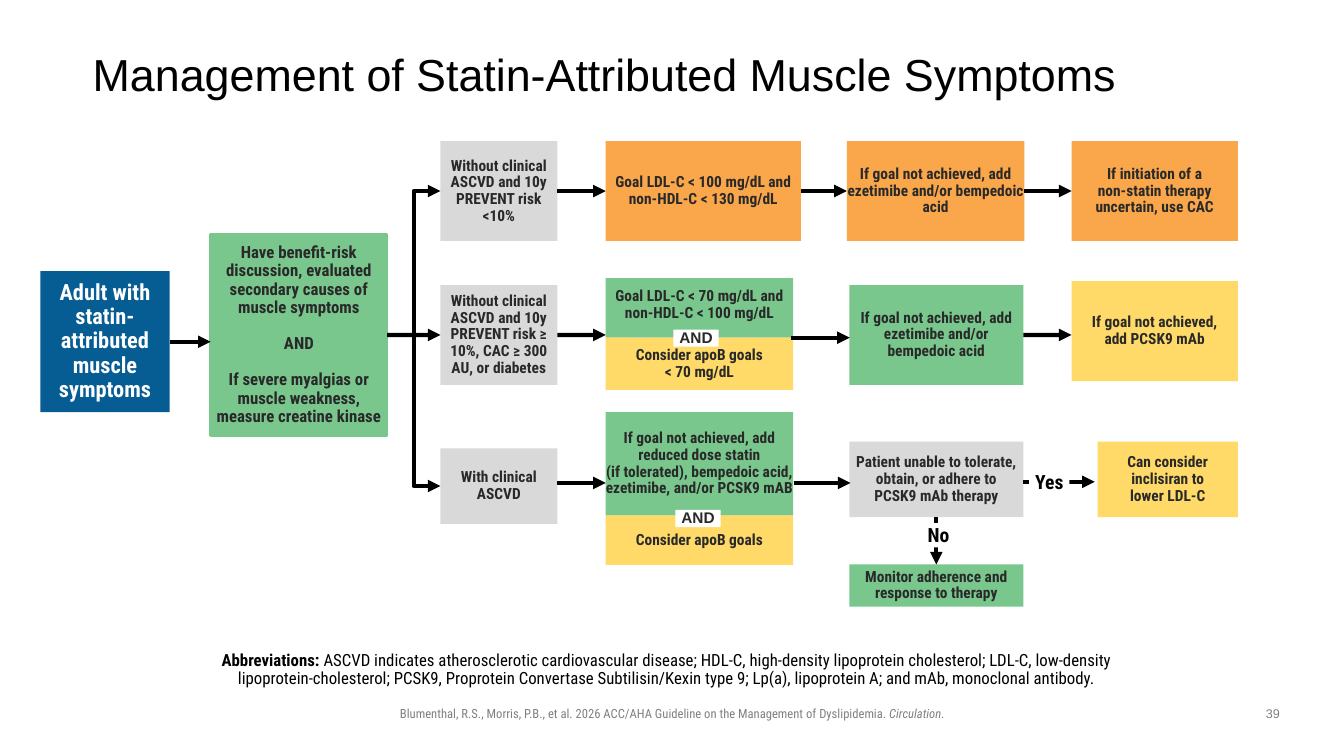
from lxml import etree
from pptx import Presentation
from pptx.dml.color import RGBColor
from pptx.enum.shapes import MSO_CONNECTOR, MSO_SHAPE
from pptx.enum.text import MSO_ANCHOR, MSO_AUTO_SIZE, PP_ALIGN
from pptx.oxml.ns import qn
from pptx.util import Pt

RECTANGLE = MSO_SHAPE.RECTANGLE
STRAIGHT, ELBOW = MSO_CONNECTOR.STRAIGHT, MSO_CONNECTOR.ELBOW
TOP, MIDDLE, BOTTOM = MSO_ANCHOR.TOP, MSO_ANCHOR.MIDDLE, MSO_ANCHOR.BOTTOM
LEFT, CENTER = PP_ALIGN.LEFT, PP_ALIGN.CENTER
NO_AUTOFIT = MSO_AUTO_SIZE.NONE

CONDENSED, SANS = "Roboto Condensed", "Arial"
BLUE, GREEN, ORANGE, YELLOW, GRAY = "065D93", "79C78D", "FAA74B", "FFDA68", "D9D9D9"
BLACK, WHITE, DARK, FOOTER_GRAY = "000000", "FFFFFF", "292929", "808080"
NO_INSETS = (0, 0, 0, 0)
DEFAULT_INSETS = (7.2, 3.6, 7.2, 3.6)

# Sides of a rectangle where connectors join
SIDE_LEFT, SIDE_BOTTOM, SIDE_RIGHT, SIDE_TOP = 1, 2, 3, 0

# Columns and rows of the flow chart
COLUMN_RISK, COLUMN_GOAL, COLUMN_ADD, COLUMN_LAST = 314.6, 432.7, 606.6, 765.4
WIDTH_RISK, WIDTH_GOAL, WIDTH_ADD, WIDTH_LAST = 83.5, 133.9, 124.4, 118.8
ROW_LOW, ROW_HIGH = 100.8, 203.6
ROW_HEIGHT = 71.3


def color(hex_string):
    return RGBColor.from_string(hex_string)


def place(shape, left, top, width, height):
    shape.left, shape.top = Pt(left), Pt(top)
    shape.width, shape.height = Pt(width), Pt(height)


def set_frame(shape, insets, anchor):
    frame = shape.text_frame
    frame.word_wrap = True
    frame.auto_size = NO_AUTOFIT
    frame.vertical_anchor = anchor
    frame.margin_left, frame.margin_top, frame.margin_right, frame.margin_bottom = map(Pt, insets)
    return frame


def add_text(para, text, size, font=CONDENSED, ink=DARK, bold=False, italic=False):
    for index, line in enumerate(text.split("\n")):
        if index:
            para.add_line_break()
        span = para.add_run()
        span.text = line
        span.font.name, span.font.size = font, Pt(size)
        span.font.bold, span.font.italic = bold, italic
        span.font.color.rgb = color(ink)


def add_box(page, text, fill, left, top, width, height, size=11, font=CONDENSED,
            ink=DARK, insets=NO_INSETS, anchor=MIDDLE, spacing=0.9):
    """Draw a filled rectangle; text is one string or a list of paragraphs."""
    box = page.shapes.add_shape(RECTANGLE, Pt(left), Pt(top), Pt(width), Pt(height))
    box.shadow.inherit = False
    box.fill.solid()
    box.fill.fore_color.rgb = color(fill)
    box.line.fill.background()
    frame = set_frame(box, insets, anchor)
    for index, words in enumerate([text] if isinstance(text, str) else text):
        para = frame.add_paragraph() if index else frame.paragraphs[0]
        para.alignment, para.line_spacing = CENTER, spacing
        if index:
            para.space_before = Pt(13)
        add_text(para, words, size, font, ink, bold=True)
    return box


def add_arrow(page, start, end, kind=STRAIGHT, start_side=SIDE_RIGHT, end_side=SIDE_LEFT):
    """Each end is a box to join, or an (x, y) point."""
    joins = []
    points = []
    for target, side in ((start, start_side), (end, end_side)):
        joined = not isinstance(target, tuple)
        joins.append(joined)
        points.extend(side_point(target, side) if joined else map(Pt, target))
    arrow = page.shapes.add_connector(kind, *points)
    if joins[0]:
        arrow.begin_connect(start, start_side)
    if joins[1]:
        arrow.end_connect(end, end_side)
    arrow.line.width = Pt(3)
    arrow.line.color.rgb = color(BLACK)
    etree.SubElement(arrow.line._get_or_add_ln(), qn("a:tailEnd"), type="triangle")
    etree.SubElement(arrow._element.spPr, qn("a:effectLst"))


def side_point(box, side):
    middle_x, middle_y = box.left + box.width // 2, box.top + box.height // 2
    return {SIDE_TOP: (middle_x, box.top),
            SIDE_LEFT: (box.left, middle_y),
            SIDE_BOTTOM: (middle_x, box.top + box.height),
            SIDE_RIGHT: (box.left + box.width, middle_y)}[side]


def fill_title(page):
    title = page.shapes.title
    place(title, 66.2, 28.8, 828, 51.8)
    para = set_frame(title, NO_INSETS, MIDDLE).paragraphs[0]
    para.alignment, para.line_spacing = LEFT, 0.9
    add_text(para, "Management of Statin-Attributed Muscle Symptoms", 32, SANS, BLACK)


def fill_abbreviations(page):
    body = page.placeholders[1]
    place(body, 135.4, 462.2, 689, 33.1)
    para = set_frame(body, (0, 3.6, 7.2, 3.6), BOTTOM).paragraphs[0]
    properties = para._p.get_or_add_pPr()
    properties.set("marL", "0")
    properties.set("indent", "0")
    etree.SubElement(properties, qn("a:buNone"))
    para.alignment, para.line_spacing, para.space_before = CENTER, 0.9, Pt(0)
    add_text(para, "Abbreviations: ", 12, ink=BLACK, bold=True)
    add_text(para, "ASCVD indicates atherosclerotic cardiovascular disease; HDL-C, high-density "
             "lipoprotein cholesterol; LDL-C, low-density lipoprotein-cholesterol; PCSK9, "
             "Proprotein Convertase Subtilisin/Kexin type 9; Lp(a), lipoprotein A; and mAb, "
             "monoclonal antibody.", 12, ink=BLACK)


def add_footer(page, left, width, font, parts):
    box = page.shapes.add_textbox(Pt(left), Pt(500.4), Pt(width), Pt(18))
    para = set_frame(box, DEFAULT_INSETS, TOP).paragraphs[0]
    para.alignment = CENTER
    for text, italic in parts:
        add_text(para, text, 9, font, FOOTER_GRAY, italic=italic)


def add_flow_chart(page):
    # Starting boxes
    adult = add_box(page, "Adult with statin-attributed muscle symptoms", BLUE,
                    28.8, 193.7, 92.4, 100.8, size=16, ink=WHITE, insets=DEFAULT_INSETS)
    discussion = add_box(page, ["Have benefit-risk discussion, evaluated secondary causes of "
                                "muscle symptoms", "AND", "If severe myalgias or muscle weakness, "
                                "measure creatine kinase"], GREEN, 150.5, 167.6, 126, 143.4, size=12)
    discussion.line.color.rgb = color(GREEN)
    discussion.line.width = Pt(2)

    # Low risk row
    low_risk = add_box(page, "Without clinical ASCVD and 10y PREVENT risk <10%", GRAY,
                       COLUMN_RISK, ROW_LOW, WIDTH_RISK, ROW_HEIGHT)
    low_goal = add_box(page, "Goal LDL-C < 100 mg/dL and non-HDL-C < 130 mg/dL", ORANGE,
                       COLUMN_GOAL, ROW_LOW, 139.4, ROW_HEIGHT)
    add_drug = "If goal not achieved, add ezetimibe and/or bempedoic acid"
    low_add = add_box(page, add_drug, ORANGE, 604.9, ROW_LOW, 126.9, ROW_HEIGHT)
    low_last = add_box(page, "If initiation of a\nnon-statin therapy uncertain, use CAC", ORANGE,
                       COLUMN_LAST, ROW_LOW, WIDTH_LAST, ROW_HEIGHT)

    # High risk row
    high_risk = add_box(page, "Without clinical ASCVD and 10y PREVENT risk ≥ 10%, CAC ≥ 300 AU, "
                        "or diabetes", GRAY, COLUMN_RISK, ROW_HIGH, WIDTH_RISK, ROW_HEIGHT)
    add_box(page, "Goal LDL-C < 70 mg/dL and non-HDL-C < 100 mg/dL", GREEN,
            COLUMN_GOAL, 198.7, WIDTH_GOAL, 42.5, insets=(0, 0, 0, 4.3))
    add_box(page, "Consider apoB goals\n< 70 mg/dL", YELLOW, COLUMN_GOAL, 241.2, WIDTH_GOAL, 37.4)
    high_add = add_box(page, add_drug, GREEN, COLUMN_ADD, ROW_HIGH, WIDTH_ADD, ROW_HEIGHT)
    add_box(page, "If goal not achieved,\nadd PCSK9 mAb", YELLOW,
            COLUMN_LAST, 200.9, WIDTH_LAST, ROW_HEIGHT)

    # Clinical disease row
    clinical = add_box(page, "With clinical ASCVD", GRAY, COLUMN_RISK, 320.2, WIDTH_RISK, 54)
    add_box(page, "If goal not achieved, add reduced dose statin\n(if tolerated), bempedoic acid, "
            "ezetimibe, and/or PCSK9 mAB", GREEN, COLUMN_GOAL, 294.5, WIDTH_GOAL, 73.8)
    add_box(page, "Consider apoB goals", YELLOW, COLUMN_GOAL, 368.2, WIDTH_GOAL, 35.3)
    unable = add_box(page, "Patient unable to tolerate, obtain, or adhere to\nPCSK9 mAb therapy",
                     GRAY, COLUMN_ADD, 315.4, WIDTH_ADD, 54)
    add_box(page, "Can consider inclisiran to\nlower LDL-C", YELLOW, 784.1, 315.4, 100.1, 54)
    monitor = add_box(page, "Monitor adherence and response to therapy", GREEN,
                      COLUMN_ADD, 403.2, WIDTH_ADD, 30.2)

    # Arrows
    for start, end in ((low_risk, low_goal), (low_goal, low_add), (low_add, low_last),
                       (adult, (150.5, 244.1)), (discussion, high_risk),
                       (high_risk, (COLUMN_GOAL, 239.3)), ((565.2, 241.2), (607, 241.2)),
                       (high_add, (COLUMN_LAST, 239.3)), ((398.2, 345), (COLUMN_GOAL, 345)),
                       ((567, 345), (607.5, 345)), ((731, 344.2), (782, 344.2))):
        add_arrow(page, start, end)
    for end in (low_risk, clinical):
        add_arrow(page, discussion, end, ELBOW)
    add_arrow(page, unable, monitor, start_side=SIDE_BOTTOM, end_side=SIDE_TOP)

    # Labels over boxes and arrows
    for left, top in ((481, 235.4), (482.4, 364.3)):
        add_box(page, "AND", WHITE, left, top, 32.4, 12.2, font=SANS)
    for answer, left, top in (("No", 656, 373.7), ("Yes", 735.1, 335.5)):
        add_box(page, answer, WHITE, left, top, 28.8, 17.3, size=14, ink=BLACK,
                anchor=TOP, spacing=1.0)


def main():
    deck = Presentation()
    deck.slide_width, deck.slide_height = Pt(960), Pt(540)
    page = deck.slides.add_slide(deck.slide_layouts[1])
    fill_title(page)
    fill_abbreviations(page)
    add_flow_chart(page)
    add_footer(page, 169.9, 620.6, CONDENSED,
               (("Blumenthal, R.S., Morris, P.B., et al. 2026 ACC/AHA Guideline on the Management "
                 "of Dyslipidemia. ", False), ("Circulation", True), (".", False)))
    add_footer(page, 894.2, 30.2, SANS, (("39", False),))
    deck.save("out.pptx")


if __name__ == "__main__":
    main()
